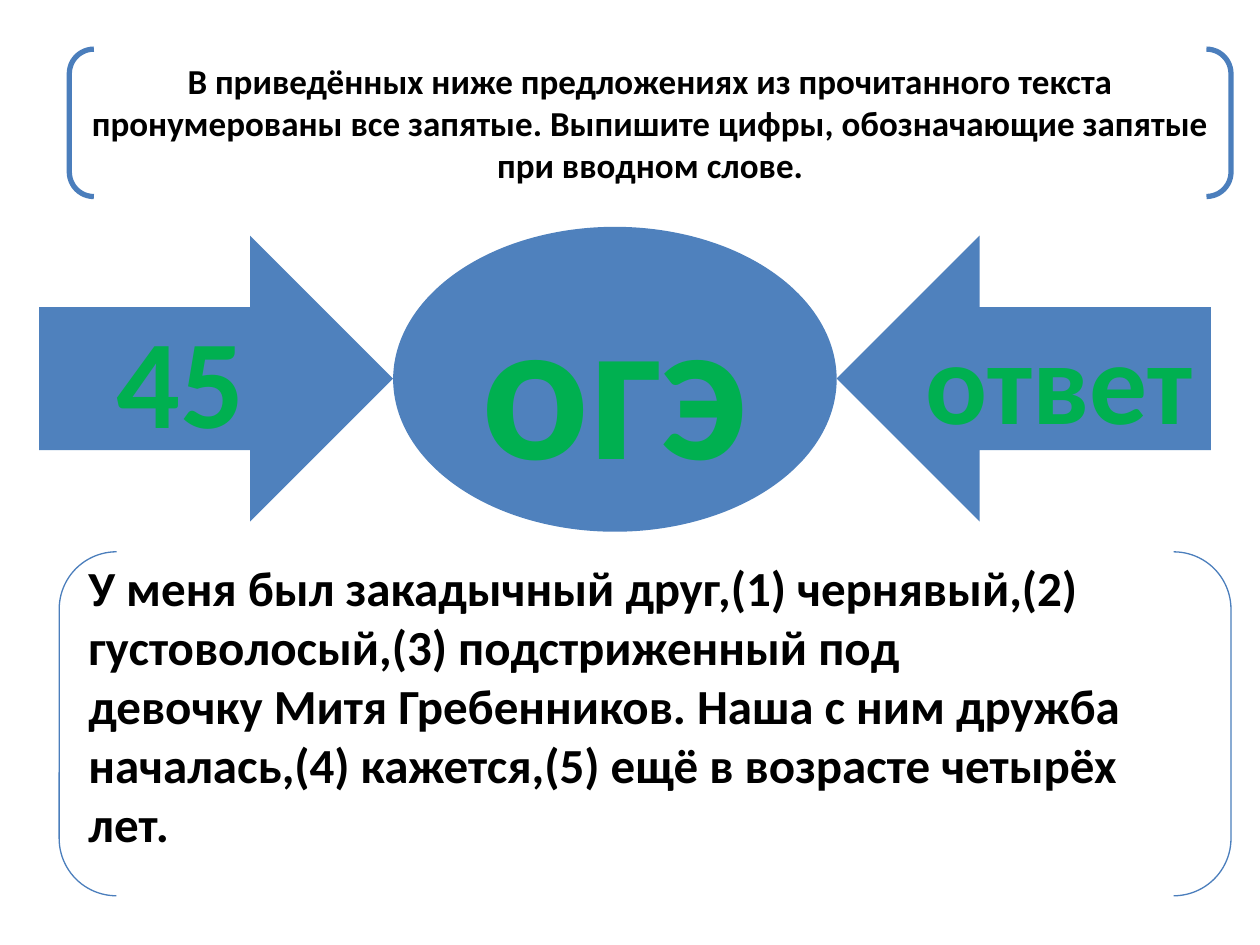
from pptx import Presentation
from pptx.dml.color import RGBColor
from pptx.enum.shapes import MSO_SHAPE
from pptx.enum.text import MSO_ANCHOR, PP_ALIGN
from pptx.util import Inches, Pt

BLUE = RGBColor(0x4F, 0x81, 0xBD)
EDGE = RGBColor(0x4B, 0x7E, 0xBC)
GREEN = RGBColor(0x00, 0xB0, 0x50)
BLACK = RGBColor(0x00, 0x00, 0x00)

TASK = (
    "В приведённых ниже предложениях из прочитанного текста пронумерованы "
    "все запятые. Выпишите цифры, обозначающие запятые при вводном слове."
)
QUOTE = (
    "У меня был закадычный друг,(1) чернявый,(2) густоволосый,(3) "
    "подстриженный под\n"
    "девочку Митя Гребенников. Наша с ним дружба началась,(4) "
    "кажется,(5) ещё в возрасте четырёх лет."
)


def write(shape, text, size, color=BLACK, align=PP_ALIGN.CENTER, foot=0.05):
    frame = shape.text_frame
    frame.word_wrap = True
    frame.vertical_anchor = MSO_ANCHOR.MIDDLE
    frame.margin_bottom = Inches(foot)
    frame.text = text
    for para in frame.paragraphs:
        para.alignment = align
        font = para.font
        font.name = "Calibri"
        font.size = Pt(size)
        font.bold = True
        font.color.rgb = color


def add_form(slide, kind, box):
    shape = slide.shapes.add_shape(kind, *[Inches(n) for n in box])
    shape.shadow.inherit = False
    return shape


def add_frame(slide, box, width, text, **style):
    shape = add_form(slide, MSO_SHAPE.DOUBLE_BRACKET, box)
    shape.fill.background()
    shape.line.color.rgb = EDGE
    shape.line.width = Pt(width)
    write(shape, text, **style)


def add_solid(slide, kind, box, text, size):
    shape = add_form(slide, kind, box)
    shape.fill.solid()
    shape.fill.fore_color.rgb = BLUE
    shape.line.fill.background()
    write(shape, text, size, color=GREEN)


def main():
    deck = Presentation()
    deck.slide_width = Inches(10)
    deck.slide_height = Inches(7.5)
    slide = deck.slides.add_slide(deck.slide_layouts[6])

    add_frame(slide, (0.55, 0.39, 9.22, 1.17), 3, TASK, size=20)
    add_frame(slide, (0.47, 4.38, 9.3, 2.73), 0.75, QUOTE,
              size=28, align=PP_ALIGN.LEFT, foot=0.35)
    add_solid(slide, MSO_SHAPE.RIGHT_ARROW, (0.31, 1.87, 2.81, 2.27), "45", 72)
    add_solid(slide, MSO_SHAPE.LEFT_ARROW, (6.64, 1.87, 2.97, 2.27), "ответ", 66)
    add_solid(slide, MSO_SHAPE.OVAL, (3.12, 1.8, 3.52, 2.42), "огэ", 115)

    deck.save("out.pptx")


if __name__ == "__main__":
    main()
